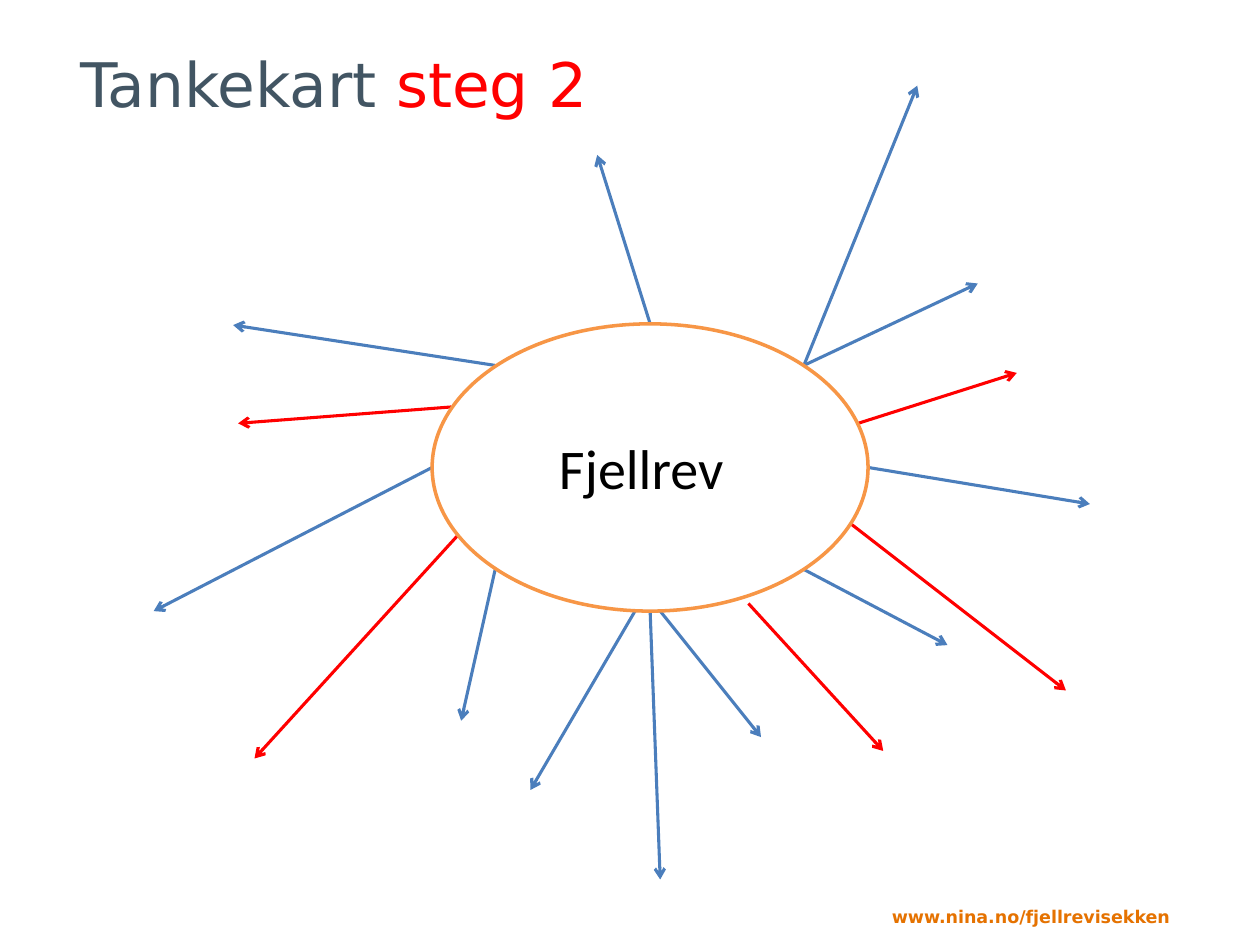
from lxml import etree
from pptx import Presentation
from pptx.dml.color import RGBColor
from pptx.enum.shapes import MSO_CONNECTOR, MSO_SHAPE
from pptx.enum.text import MSO_ANCHOR, PP_ALIGN
from pptx.oxml.ns import qn
from pptx.util import Inches, Pt

STRAIGHT = MSO_CONNECTOR.STRAIGHT
OVAL = MSO_SHAPE.OVAL
MIDDLE = MSO_ANCHOR.MIDDLE
LEFT = PP_ALIGN.LEFT

COLORS = {
    "title": "425563",
    "step": "FF0000",
    "branch": "4B7EBC",
    "ring": "F79646",
    "link": "E57200",
    "text": "000000",
    "white": "FFFFFF",
}
HEADING_FONT = "DejaVu Sans"
TOPIC_FONT = "Calibri"

BRANCHES = [
    (5.24, 4.85, 6.04, 5.85),
    (3.93, 4.52, 3.66, 5.72),
    (3.43, 3.71, 1.22, 4.85),
    (6.38, 4.52, 7.52, 5.12),
    (6.89, 3.71, 8.65, 4),
    (6.38, 2.9, 7.76, 2.25),
    (5.16, 2.57, 4.74, 1.23),
    (3.93, 2.9, 1.85, 2.58),
    (6.38, 2.9, 7.28, 0.68),
    (5.04, 4.85, 4.21, 6.27),
    (5.16, 4.85, 5.24, 6.98),
]
STEP_BRANCHES = [
    (6.73, 4.14, 8.46, 5.48),
    (3.66, 4.22, 2.02, 6.02),
    (6.81, 3.36, 8.07, 2.96),
    (5.94, 4.79, 7.01, 5.96),
    (3.58, 3.23, 1.89, 3.36),
]


def rgb(name):
    """Return the named colour."""
    return RGBColor.from_string(COLORS[name])


def add_run(p, text, font, size, color, bold=False):
    """Add one formatted run to a paragraph."""
    r = p.add_run()
    r.text = text
    r.font.name = font
    r.font.size = Pt(size)
    r.font.bold = bold
    r.font.color.rgb = rgb(color)


def add_title(s, left, top, width, height):
    """Place the two-coloured slide title."""
    sp = s.shapes.title
    sp.left, sp.top = Inches(left), Inches(top)
    sp.width, sp.height = Inches(width), Inches(height)
    tf = sp.text_frame
    tf.vertical_anchor = MIDDLE
    tf.word_wrap = True
    p = tf.paragraphs[0]
    p.alignment = LEFT
    add_run(p, "Tankekart ", HEADING_FONT, 35.1, "title")
    add_run(p, "steg 2", HEADING_FONT, 35.1, "step")


def add_arrows(s, arrows, color):
    """Draw arrows given as start and end points."""
    for ends in arrows:
        line = s.shapes.add_connector(STRAIGHT, *map(Inches, ends))
        line.line.color.rgb = rgb(color)
        line.line.width = Pt(1.75)
        ln = line.line._get_or_add_ln()
        etree.SubElement(ln, qn("a:tailEnd"), type="arrow")
        etree.SubElement(line._element.spPr, qn("a:effectLst"))


def add_topic(s, left, top, width, height):
    """Draw the central oval with the topic."""
    sp = s.shapes.add_shape(OVAL, *map(Inches, (left, top, width, height)))
    sp.shadow.inherit = False
    sp.fill.solid()
    sp.fill.fore_color.rgb = rgb("white")
    sp.line.color.rgb = rgb("ring")
    sp.line.width = Pt(2)
    tf = sp.text_frame
    tf.word_wrap = True
    tf.vertical_anchor = MIDDLE
    tf.margin_left = Inches(0.5)
    p = tf.paragraphs[0]
    p.alignment = LEFT
    add_run(p, "Fjellrev", TOPIC_FONT, 32, "text")


def add_footer(s, left, top, width, height):
    """Place the web address at the bottom."""
    sp = s.shapes.add_textbox(*map(Inches, (left, top, width, height)))
    tf = sp.text_frame
    tf.word_wrap = True
    add_run(tf.paragraphs[0], "www.nina.no/fjellrevisekken",
            HEADING_FONT, 10, "link", bold=True)


def main():
    """Build and save the mind map slide."""
    prs = Presentation()
    prs.slide_width, prs.slide_height = Inches(10), Inches(7.5)
    s = prs.slides.add_slide(prs.slide_layouts[5])
    add_footer(s, 6.98, 7.14, 2.52, 0.27)
    add_title(s, 0.54, 0.3, 9, 0.71)
    add_arrows(s, BRANCHES, "branch")
    add_arrows(s, STEP_BRANCHES, "step")
    add_topic(s, 3.43, 2.57, 3.46, 2.28)
    prs.save("out.pptx")


if __name__ == "__main__":
    main()
